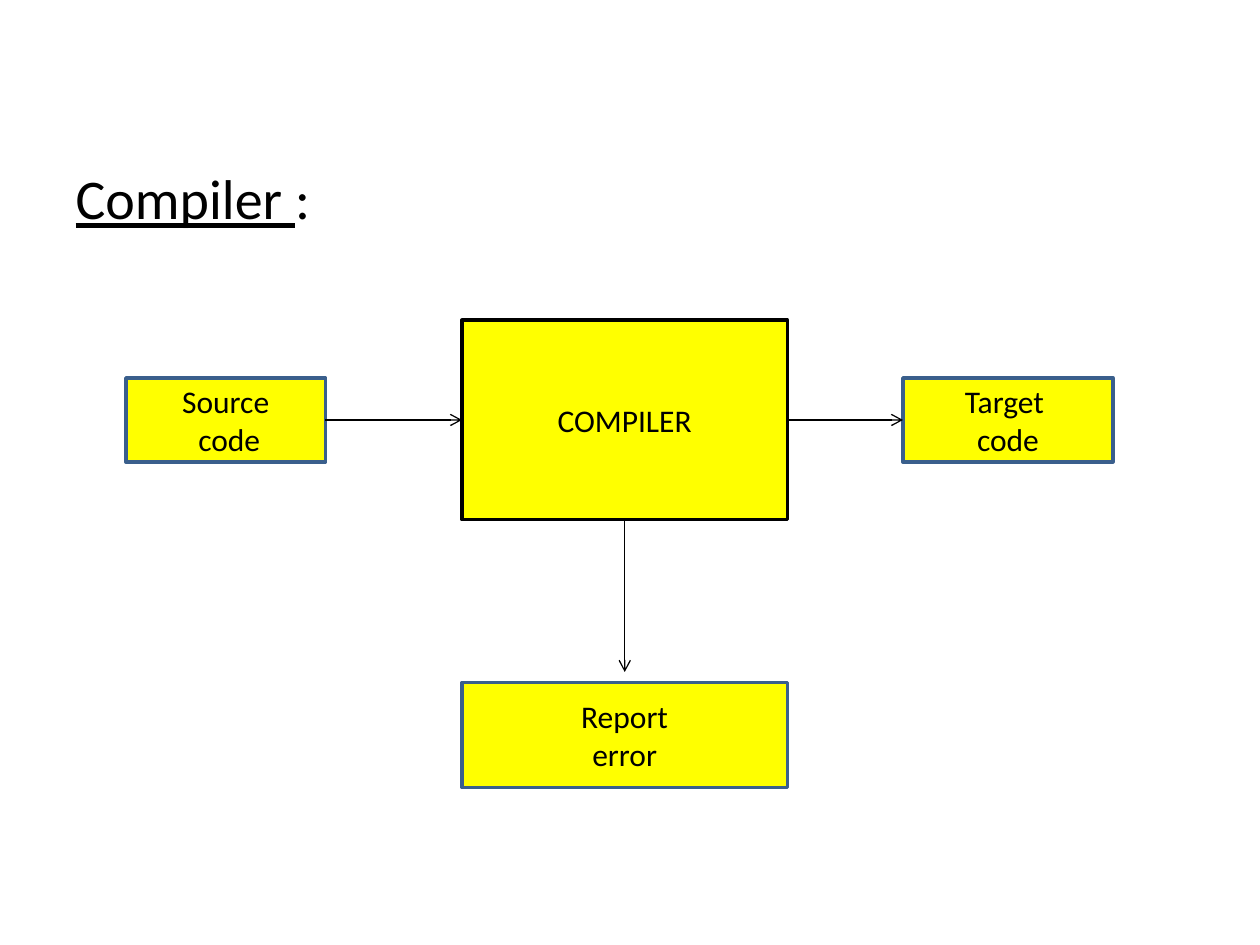
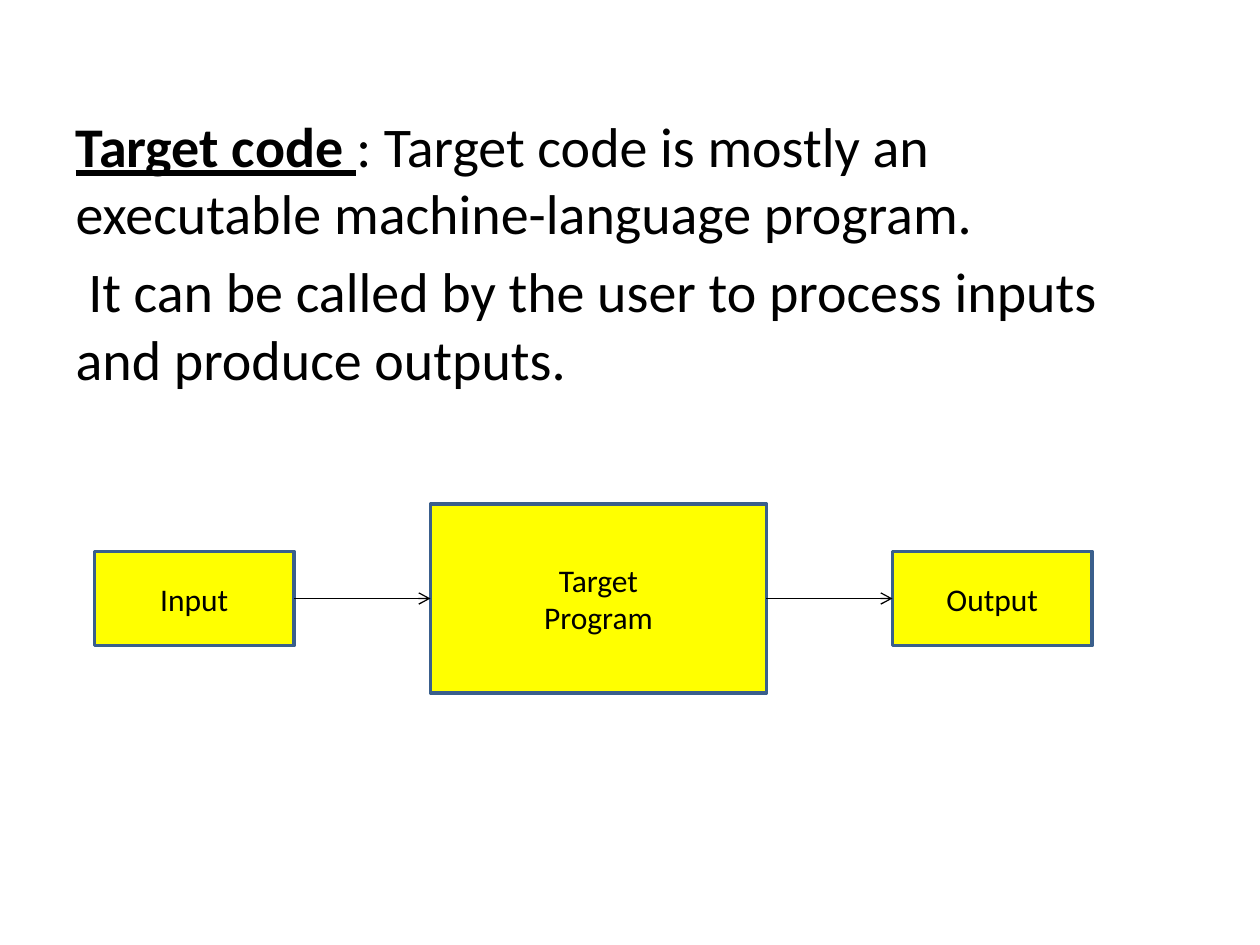
import pptx
import pptx.dml.color
import pptx.enum.shapes
import pptx.enum.text
import pptx.oxml.ns
import pptx.util
from lxml import etree

Pt = pptx.util.Pt
qn = pptx.oxml.ns.qn
TOP, LEFT, BOTTOM, RIGHT = range(4)


def colour(code):
    return pptx.dml.color.RGBColor.from_string(code)


class FlowDeck:
    """Shared style and the slide being drawn."""

    FONT = "Calibri"
    INK = "000000"
    FILL = "FFFF00"
    BORDER = "3A5F8C"
    BODY_SIZE = 32
    BOX_SIZE = 18

    def __init__(self):
        self.deck = pptx.Presentation()
        self.deck.slide_width, self.deck.slide_height = Pt(720), Pt(540)
        self.page = None

    def add_page(self):
        self.page = self.deck.slides.add_slide(self.deck.slide_layouts[1])
        title = self.page.shapes.title
        title.element.getparent().remove(title.element)

    def add_span(self, para, text, size, bold=False, underline=False):
        span = para.add_run()
        span.text = text
        font = span.font
        font.name, font.size = self.FONT, Pt(size)
        font.bold, font.underline = bold, underline
        font.color.rgb = colour(self.INK)

    def add_body(self, top, height, heading, paragraphs, bold=False):
        """Unbulleted text whose first line opens with an underlined heading."""
        holder = self.page.placeholders[1]
        holder.left, holder.top = Pt(36), Pt(top)
        holder.width, holder.height = Pt(648), Pt(height)
        frame = holder.text_frame
        for index, text in enumerate(paragraphs):
            para = frame.add_paragraph() if index else frame.paragraphs[0]
            properties = para._p.get_or_add_pPr()
            properties.set("marL", "0")
            properties.set("indent", "0")
            etree.SubElement(properties, qn("a:buNone"))
            if not index:
                self.add_span(para, heading, self.BODY_SIZE, bold, True)
            self.add_span(para, text, self.BODY_SIZE)

    def add_box(self, left, middle, width, height, lines, border=BORDER):
        """Rectangle centred vertically on middle, one paragraph per line."""
        box = self.page.shapes.add_shape(
            pptx.enum.shapes.MSO_SHAPE.RECTANGLE,
            Pt(left), Pt(middle - height / 2), Pt(width), Pt(height))
        box.shadow.inherit = False
        box.fill.solid()
        box.fill.fore_color.rgb = colour(self.FILL)
        box.line.color.rgb = colour(border)
        box.line.width = Pt(2)
        frame = box.text_frame
        frame.word_wrap = True
        frame.vertical_anchor = pptx.enum.text.MSO_ANCHOR.MIDDLE
        for index, text in enumerate(lines):
            para = frame.add_paragraph() if index else frame.paragraphs[0]
            para.alignment = pptx.enum.text.PP_ALIGN.CENTER
            self.add_span(para, text, self.BOX_SIZE)
        return box

    def add_arrow(self, source, side, target=None, end=(0, 0)):
        """Arrow from a box side to the left side of target, or to a free end."""
        line = self.page.shapes.add_connector(
            pptx.enum.shapes.MSO_CONNECTOR.STRAIGHT,
            Pt(0), Pt(0), Pt(end[0]), Pt(end[1]))
        line.begin_connect(source, side)
        if target is not None:
            line.end_connect(target, LEFT)
        line.line.color.rgb = colour(self.INK)
        line.line.width = Pt(0.75)
        properties = line.element.spPr
        etree.SubElement(properties.find(qn("a:ln")), qn("a:tailEnd"), type="arrow")
        etree.SubElement(properties, qn("a:effectLst"))

    def add_chain(self, *boxes):
        """Arrows from each box to the next one on its right."""
        for source, target in zip(boxes, boxes[1:]):
            self.add_arrow(source, RIGHT, target)


def main():
    flow = FlowDeck()

    # Compiler: source code in, target code and errors out
    flow.add_page()
    flow.add_body(90, 392, "Compiler ", [":"])
    middle = 240
    source = flow.add_box(72, middle, 114, 48, ["Source", " code"])
    target = flow.add_box(516, middle, 120, 48, ["Target ", "code"])
    compiler = flow.add_box(264, middle, 186, 114, ["COMPILER"], flow.INK)
    flow.add_chain(source, compiler, target)
    flow.add_arrow(compiler, BOTTOM, end=(357, 384))
    flow.add_box(264, 420, 186, 60, ["Report", "error"])

    # Target code: the program turns input into output
    flow.add_page()
    flow.add_body(60, 410, "Target code ", [
        ": Target code is mostly an executable machine-language program.",
        " It can be called by the user to process inputs and produce outputs.",
    ], bold=True)
    middle = 342
    given = flow.add_box(54, middle, 114, 54, ["Input"])
    result = flow.add_box(510, middle, 114, 54, ["Output"])
    program = flow.add_box(246, middle, 192, 108, ["Target", "Program"])
    flow.add_chain(given, program, result)

    flow.deck.save("out.pptx")


if __name__ == "__main__":
    main()
